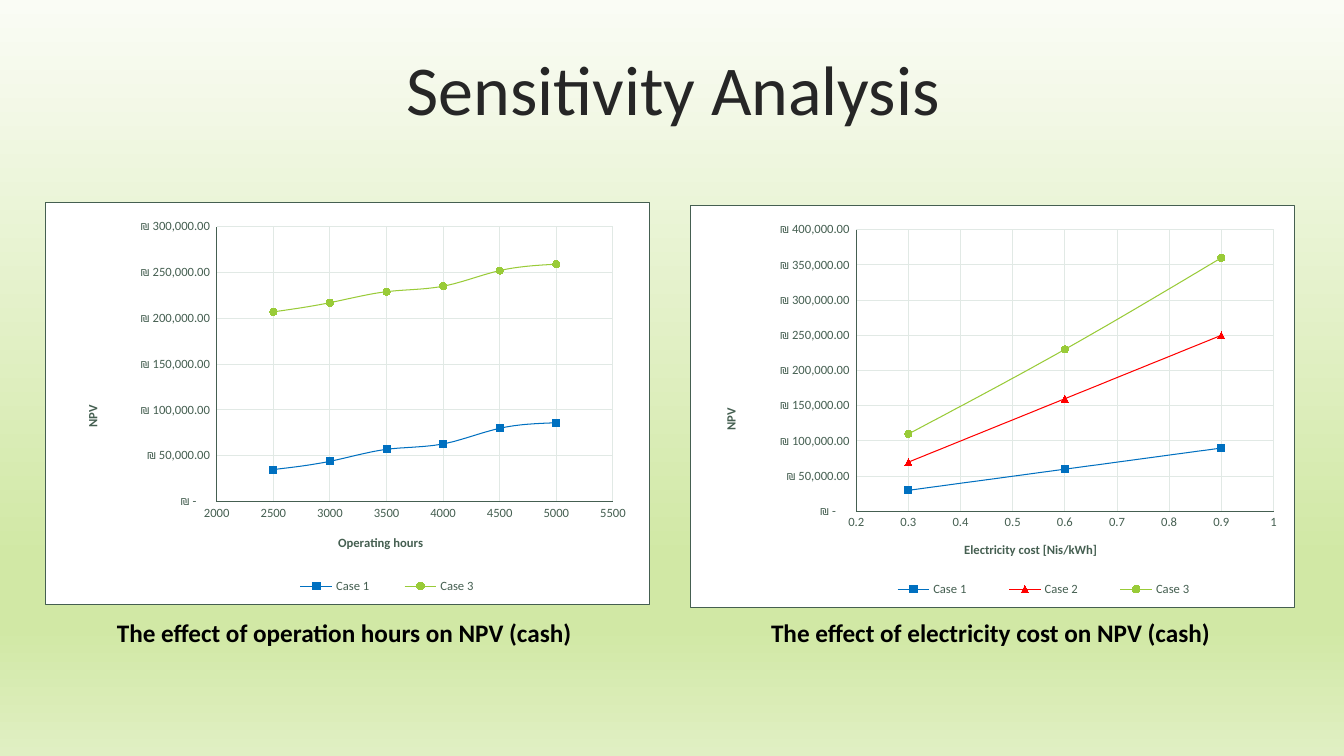
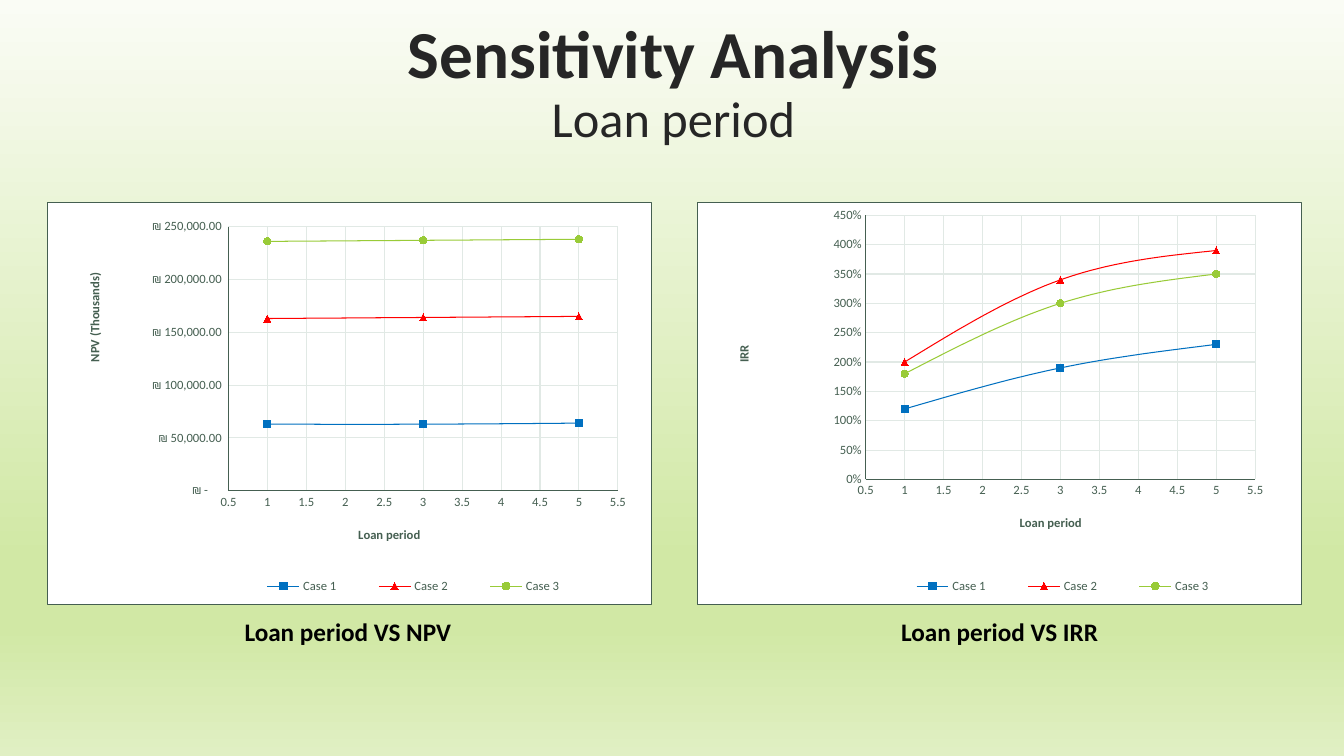
import lxml.etree
import pptx
import pptx.chart.data
import pptx.dml.color
import pptx.enum.chart
import pptx.enum.text
import pptx.oxml
import pptx.oxml.ns
import pptx.util

WIDTH, HEIGHT = 13.33, 7.5
CHART_W, CHART_H = 6, 4
FONT = "Calibri"
TITLE, INK, AXIS, GRID, WHITE = "262626", "000000", "455F51", "E1E9E5", "FFFFFF"
BACKGROUND = [(0, "FAFCF5"), (74, "D1E8A5"), (83, "D1E8A5"), (100, "E0EFC3")]
MARKER = pptx.enum.chart.XL_MARKER_STYLE
CASES = {
    "Case 1": ("0070C0", MARKER.SQUARE),
    "Case 2": ("FF0000", MARKER.TRIANGLE),
    "Case 3": ("99CB38", MARKER.CIRCLE),
}
SHEKEL = '_ "₪" * #,##0.00_ ;_ "₪" * -#,##0.00_ ;_ "₪" * "-"??_ ;_ @_ '
LOAN_YEARS = [1, 3, 5]
LOAN_SCALE = (0.5, 5.5, 0.5)

# Axes: title, (minimum, maximum, step), number format, title corner as shares of the chart.
# Plot and legend: left, top, width, height as shares of the chart.
SLIDES = [
    {
        "title": [("Sensitivity Analysis", 50, False)],
        "title_box": (0.35, 0.55, 12.66, 0.79),
        "spacing": 0.8,
        "charts": [
            {
                "at": (0.45, 2),
                "x_axis": ("Operating hours", (2000, 5500, 500), "General", (0.48, 0.82)),
                "y_axis": ("NPV", (0, 300000, 50000), SHEKEL, (0.06, 0.5)),
                "plot": (0.283, 0.061, 0.656, 0.684),
                "legend": (0.37, 0.92, 0.39, 0.07),
                "x": [2500, 3000, 3500, 4000, 4500, 5000],
                "series": {
                    "Case 1": [35000, 44000, 57000, 63000, 80000, 86000],
                    "Case 3": [207000, 217000, 229000, 235000, 252000, 259000],
                },
                "caption": ("The effect of operation hours on NPV (cash)", 0.75, 6.08, 5.33),
            },
            {
                "at": (6.84, 2.03),
                "x_axis": ("Electricity cost [Nis/kWh]", (0.2, 1, 0.1), "General", (0.45, 0.83)),
                "y_axis": ("NPV", (0, 400000, 50000), SHEKEL, (0.05, 0.5)),
                "plot": (0.275, 0.061, 0.691, 0.701),
                "legend": (0.28, 0.92, 0.61, 0.07),
                "x": [0.3, 0.6, 0.9],
                "series": {
                    "Case 1": [30000, 60000, 90000],
                    "Case 2": [70000, 160000, 250000],
                    "Case 3": [110000, 230000, 360000],
                },
                "caption": ("The effect of electricity cost on NPV (cash)", 6.98, 6.08, 5.69),
            },
        ],
    },
    {
        "title": [("Sensitivity Analysis", 48, True), ("Loan period", 36, False)],
        "title_box": (0.35, 0.26, 12.66, 1.26),
        "spacing": 0.7,
        "charts": [
            {
                "at": (0.47, 2),
                "x_axis": ("Loan period", LOAN_SCALE, "General", (0.51, 0.8)),
                "y_axis": ("NPV (Thousands)", (0, 250000, 50000), SHEKEL, (0.06, 0.17)),
                "plot": (0.299, 0.061, 0.645, 0.657),
                "legend": (0.3, 0.92, 0.61, 0.07),
                "x": LOAN_YEARS,
                "series": {
                    "Case 1": [63000, 63000, 64000],
                    "Case 2": [163000, 164000, 165000],
                    "Case 3": [236000, 237000, 238000],
                },
                "caption": ("Loan period VS NPV", 0.69, 6.07, 5.52),
            },
            {
                "at": (6.91, 2),
                "x_axis": ("Loan period", LOAN_SCALE, "General", (0.53, 0.77)),
                "y_axis": ("IRR", (0, 4.5, 0.5), "0%", (0.06, 0.35)),
                "plot": (0.279, 0.033, 0.645, 0.657),
                "legend": (0.3, 0.92, 0.61, 0.07),
                "x": LOAN_YEARS,
                "series": {
                    "Case 1": [1.2, 1.9, 2.3],
                    "Case 2": [2, 3.4, 3.9],
                    "Case 3": [1.8, 3, 3.5],
                },
                "caption": ("Loan period VS IRR", 7.07, 6.07, 5.69),
            },
        ],
    },
]


def color(value):
    return pptx.dml.color.RGBColor.from_string(value)


def inches(*values):
    return [pptx.util.Inches(v) for v in values]


def set_font(font, size, hex_color, bold=False):
    values = {"name": FONT, "size": pptx.util.Pt(size), "bold": bold}
    for name, value in values.items():
        setattr(font, name, value)
    font.color.rgb = color(hex_color)


def set_line(line, hex_color):
    line.color.rgb = color(hex_color)
    line.width = pptx.util.Pt(0.75)


def paint_background(master):
    fill = master.background.fill
    fill.gradient()
    fill.gradient_angle = 270
    stops = fill._fill._gradFill.find(pptx.oxml.ns.qn("a:gsLst"))
    for stop in list(stops):
        stops.remove(stop)
    for share, value in BACKGROUND:
        stop = lxml.etree.SubElement(stops, pptx.oxml.ns.qn("a:gs"), pos=str(share * 1000))
        lxml.etree.SubElement(stop, pptx.oxml.ns.qn("a:srgbClr"), val=value)


def place(element, index, box, inner=False):
    """Give a chart part a manual layout, inserted at the child index its schema asks for."""
    qn = pptx.oxml.ns.qn
    for old in element.findall(qn("c:layout")):
        element.remove(old)
    layout = lxml.etree.Element(qn("c:layout"))
    manual = lxml.etree.SubElement(layout, qn("c:manualLayout"))
    settings = [("layoutTarget", "inner")] if inner else []
    settings += [("xMode", "edge"), ("yMode", "edge")]
    settings += [(name, str(share)) for name, share in zip("xywh", box)]
    for name, value in settings:
        lxml.etree.SubElement(manual, qn("c:" + name), val=value)
    element.insert(index, layout)


def frame_chart(chart):
    """Give the whole chart a white fill and a thin border."""
    chart._chartSpace.chart.addnext(pptx.oxml.parse_xml(
        f'<c:spPr {pptx.oxml.ns.nsdecls("c", "a")}>'
        f'<a:solidFill><a:srgbClr val="{WHITE}"/></a:solidFill>'
        f'<a:ln w="9525"><a:solidFill><a:srgbClr val="{AXIS}"/></a:solidFill></a:ln>'
        '</c:spPr>'))


def format_axis(axis, title, scale, number_format, corner, upright=False):
    axis.minimum_scale, axis.maximum_scale, axis.major_unit = scale
    axis.major_tick_mark = axis.minor_tick_mark = pptx.enum.chart.XL_TICK_MARK.NONE
    axis.has_major_gridlines = True
    set_line(axis.major_gridlines.format.line, GRID)
    set_line(axis.format.line, AXIS)
    set_font(axis.tick_labels.font, 9, AXIS)
    axis.tick_labels.number_format = number_format
    axis.tick_labels.number_format_is_linked = False
    tf = axis.axis_title.text_frame
    r = tf.paragraphs[0].add_run()
    r.text = title
    set_font(r.font, 9, AXIS, bold=True)
    if upright:
        tf._txBody.bodyPr.set("rot", "-5400000")
        tf._txBody.bodyPr.set("vert", "horz")
    place(axis.axis_title._element, 1, corner)


def add_scatter(s, item):
    data = pptx.chart.data.XyChartData()
    for name, values in item["series"].items():
        series = data.add_series(name)
        for x, y in zip(item["x"], values):
            series.add_data_point(x, y)
    chart = s.shapes.add_chart(
        pptx.enum.chart.XL_CHART_TYPE.XY_SCATTER_SMOOTH,
        *inches(*item["at"], CHART_W, CHART_H), data).chart
    set_font(chart.font, 10, INK)
    frame_chart(chart)
    chart.has_title = False
    chart.plots[0].vary_by_categories = False
    place(chart._chartSpace.chart.plotArea, 0, item["plot"], inner=True)
    format_axis(chart.category_axis, *item["x_axis"])
    format_axis(chart.value_axis, *item["y_axis"], upright=True)

    chart.has_legend = True
    chart.legend.position = pptx.enum.chart.XL_LEGEND_POSITION.BOTTOM
    chart.legend.include_in_layout = False
    set_font(chart.legend.font, 9, AXIS)
    place(chart.legend._element, 1, item["legend"])

    for series in chart.plots[0].series:
        hex_color, style = CASES[series.name]
        set_line(series.format.line, hex_color)
        series._element.find(pptx.oxml.ns.qn("c:smooth")).set("val", "1")
        series.marker.style, series.marker.size = style, 5
        series.marker.format.fill.solid()
        series.marker.format.fill.fore_color.rgb = color(hex_color)
        set_line(series.marker.format.line, hex_color)


def write_paragraph(p, text, size, hex_color, bold):
    p.alignment = pptx.enum.text.PP_ALIGN.CENTER
    r = p.add_run()
    r.text = text
    set_font(r.font, size, hex_color, bold)


def add_title(s, lines, box, spacing):
    sp = s.shapes.title
    sp.left, sp.top, sp.width, sp.height = inches(*box)
    tf = sp.text_frame
    tf.vertical_anchor = pptx.enum.text.MSO_ANCHOR.MIDDLE
    tf.auto_size = pptx.enum.text.MSO_AUTO_SIZE.NONE
    for i, (text, size, bold) in enumerate(lines):
        p = tf.add_paragraph() if i else tf.paragraphs[0]
        p.line_spacing, p.space_before = spacing, pptx.util.Pt(10)
        write_paragraph(p, text, size, TITLE, bold)


def add_caption(s, text, left, top, width):
    tf = s.shapes.add_textbox(*inches(left, top, width, 0.4)).text_frame
    tf.word_wrap = True
    write_paragraph(tf.paragraphs[0], text, 18, INK, True)


def main():
    prs = pptx.Presentation()
    prs.slide_width, prs.slide_height = inches(WIDTH, HEIGHT)
    paint_background(prs.slide_master)
    for content in SLIDES:
        s = prs.slides.add_slide(prs.slide_layouts[5])
        add_title(s, content["title"], content["title_box"], content["spacing"])
        for item in content["charts"]:
            add_scatter(s, item)
            add_caption(s, *item["caption"])
    prs.save("out.pptx")


if __name__ == "__main__":
    main()
